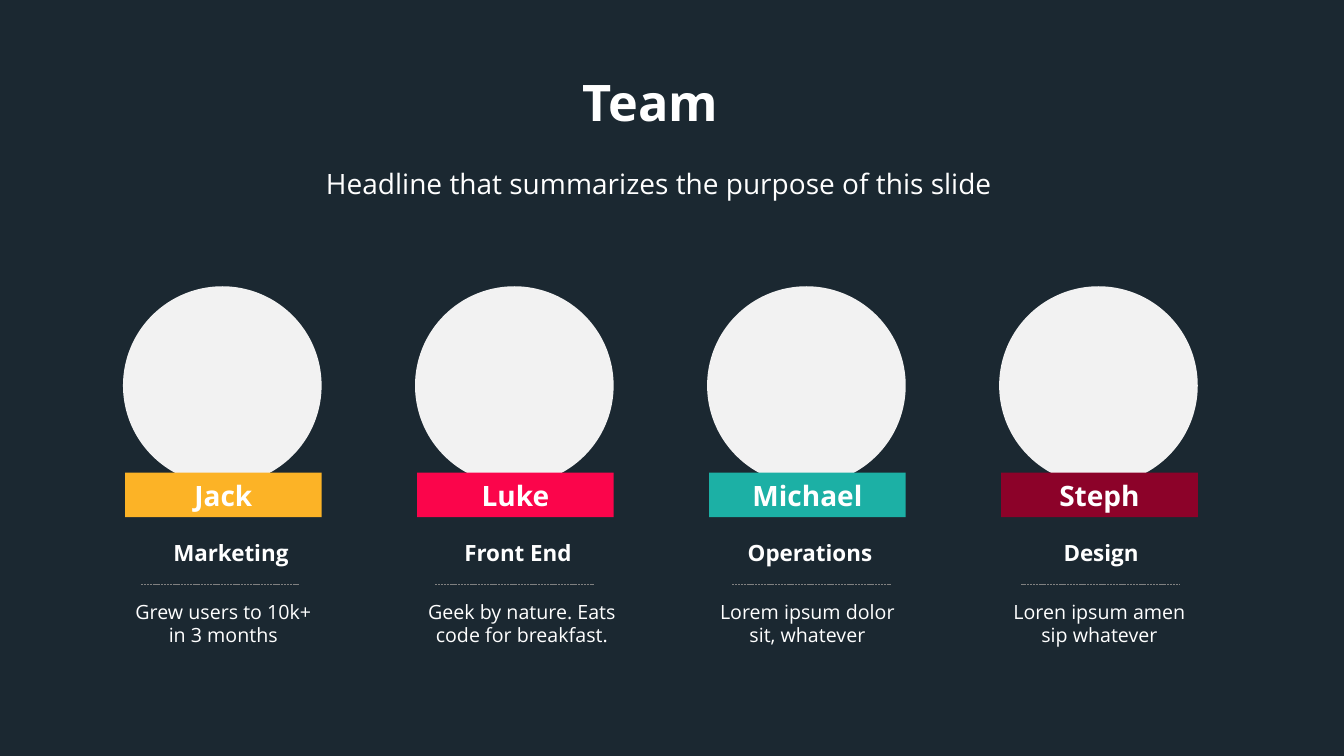
from dataclasses import dataclass

from lxml import etree
from pptx import Presentation
from pptx.dml.color import RGBColor
from pptx.enum.dml import MSO_LINE
from pptx.enum.shapes import MSO_CONNECTOR, MSO_SHAPE
from pptx.enum.text import MSO_ANCHOR, MSO_AUTO_SIZE, PP_ALIGN
from pptx.oxml.ns import qn
from pptx.util import Inches, Pt

FONT = "Open Sans"
COLORS = {
    "back": "1B2831",
    "text": "FFFFFF",
    "photo": "F2F2F2",
    "rule": "808080",
    "amber": "FCB326",
    "red": "FB054B",
    "teal": "1CB0A5",
    "wine": "8C0229",
}


@dataclass
class Member:
    name: str
    color: str
    role: str
    bio: str
    # Horizontal offsets from the left edge of the member's box, in inches
    role_mid: float
    rule_left: float
    bio_left: float
    bio_width: float


TEAM = [
    Member("Jack", "amber", "Marketing", "Grew users to 10k+ in 3 months",
           1.07, 0.18, 0, 1.99),
    Member("Luke", "red", "Front End", "Geek by nature. Eats code for breakfast.",
           1.02, 0.2, -0.04, 2.2),
    Member("Michael", "teal", "Operations", "Lorem ipsum dolor sit, whatever",
           1.02, 0.25, 0.02, 1.95),
    Member("Steph", "wine", "Design", "Loren ipsum amen sip whatever",
           1.01, 0.22, 0.02, 1.95),
]


def rgb(key):
    return RGBColor.from_string(COLORS[key])


def place(shape, left, top, width, height):
    shape.left, shape.top = Inches(left), Inches(top)
    shape.width, shape.height = Inches(width), Inches(height)


def write(shape, text, size, bold=False, wrap=True, anchor=MSO_ANCHOR.TOP):
    frame = shape.text_frame
    frame.word_wrap = wrap
    frame.auto_size = MSO_AUTO_SIZE.NONE
    frame.vertical_anchor = anchor
    para = frame.paragraphs[0]
    para.alignment = PP_ALIGN.CENTER
    para.line_spacing = 1.0
    para.space_before = Pt(0)
    run = para.add_run()
    run.text = text
    font = run.font
    font.name, font.size, font.bold = FONT, Pt(size), bold
    font.color.rgb = rgb("text")


def add_label(slide, text, size, left, top, width, height, **style):
    box = slide.shapes.add_textbox(
        Inches(left), Inches(top), Inches(width), Inches(height))
    write(box, text, size, **style)


def add_block(slide, kind, color, left, top, width, height):
    block = slide.shapes.add_shape(
        kind, Inches(left), Inches(top), Inches(width), Inches(height))
    block.shadow.inherit = False
    block.fill.solid()
    block.fill.fore_color.rgb = rgb(color)
    block.line.fill.background()
    return block


def add_rule(slide, left, top, width):
    rule = slide.shapes.add_connector(
        MSO_CONNECTOR.STRAIGHT, Inches(left), Inches(top),
        Inches(left + width), Inches(top))
    rule.line.color.rgb = rgb("rule")
    rule.line.width = Pt(0.5)
    rule.line.dash_style = MSO_LINE.SQUARE_DOT
    props = rule.element.find(qn("p:spPr"))
    etree.SubElement(props, qn("a:effectLst"))


def add_header(slide, left, top, width):
    title, headline = slide.placeholders
    place(title, left + 4.58, top, 1.56, 0.71)
    write(title, "Team", 36, bold=True, wrap=False)
    place(headline, left, top + 0.94, width, 0.44)
    write(headline, "Headline that summarizes the purpose of this slide", 20)


def add_member(slide, member, left, top, size):
    add_block(slide, MSO_SHAPE.OVAL, "photo", left, top, size, size)
    badge = add_block(slide, MSO_SHAPE.RECTANGLE, member.color,
                      left + 0.02, top + 1.85, size - 0.02, 0.44)
    write(badge, member.name, 20, bold=True, anchor=MSO_ANCHOR.MIDDLE)
    width = 1.45
    add_label(slide, member.role, 16, left + member.role_mid - width / 2,
              top + 2.46, width, 0.37, bold=True, wrap=False)
    add_rule(slide, left + member.rule_left, top + 2.96, 1.57)
    add_label(slide, member.bio, 14, left + member.bio_left,
              top + 3.06, member.bio_width, 0.57)


def add_team(slide, left, top, width):
    size = 1.97
    step = (width - size) / (len(TEAM) - 1)
    for col, member in enumerate(TEAM):
        add_member(slide, member, left + col * step, top, size)


def main():
    deck = Presentation()
    deck.slide_width, deck.slide_height = Inches(13.33), Inches(7.5)
    slide = deck.slides.add_slide(deck.slide_layouts[0])
    slide.background.fill.solid()
    slide.background.fill.fore_color.rgb = rgb("back")
    add_header(slide, 1.09, 0.66, 10.89)
    add_team(slide, 1.22, 2.84, 10.66)
    deck.save("out.pptx")


if __name__ == "__main__":
    main()
